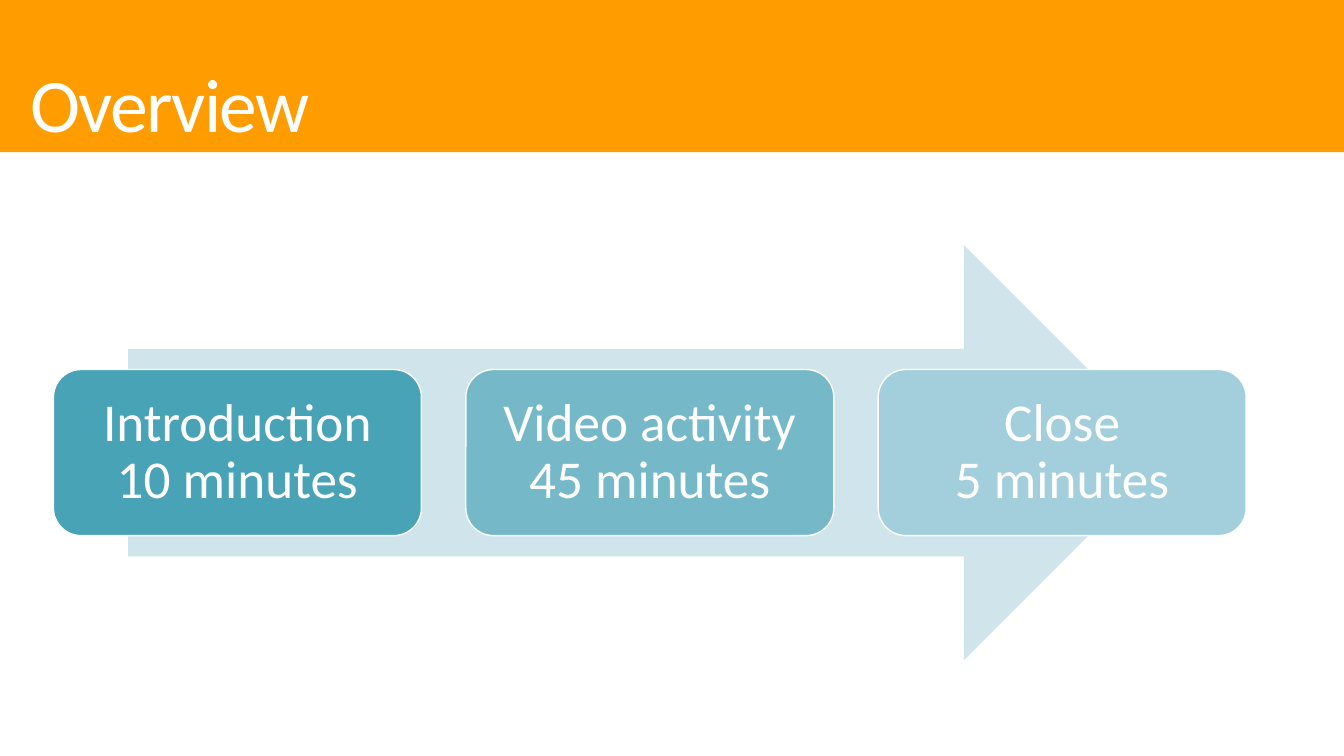
from dataclasses import dataclass

from pptx import Presentation
from pptx.dml.color import RGBColor
from pptx.enum.shapes import MSO_SHAPE as SHAPE
from pptx.enum.text import MSO_ANCHOR as ANCHOR, PP_ALIGN as ALIGN
from pptx.util import Inches, Pt


@dataclass(frozen=True)
class Theme:
    """Colours, font and type sizes of the slide."""
    font: str = "Calibri"
    title_size: int = 54
    step_size: int = 38
    white: str = "FFFFFF"
    band: str = "FE9C00"
    arrow: str = "D0E5EB"
    steps: tuple = ("49A3B6", "75B9C8", "A2CFDB")


THEME = Theme()
STEPS = (
    ("Introduction", "10 minutes"),
    ("Video activity", "45 minutes"),
    ("Close", "5 minutes"),
)


def add_block(s, kind, box, fill, line=None):
    """Add a flat preset shape with an optional outline."""
    sp = s.shapes.add_shape(kind, *map(Inches, box))
    sp.shadow.inherit = False
    sp.fill.solid()
    sp.fill.fore_color.rgb = RGBColor.from_string(fill)
    if line:
        sp.line.color.rgb = RGBColor.from_string(line)
        sp.line.width = Pt(1)
    else:
        sp.line.fill.background()
    return sp


def write(tf, lines, size, align, leading):
    """Write one paragraph of broken lines and return its runs."""
    tf.word_wrap = True
    tf.vertical_anchor = ANCHOR.MIDDLE
    p = tf.paragraphs[0]
    p.alignment = align
    p.line_spacing = leading
    runs = []
    for i, text in enumerate(lines):
        if i:
            p.add_line_break()
        r = p.add_run()
        r.text = text
        r.font.name = THEME.font
        r.font.size = Pt(size)
        r.font.color.rgb = RGBColor.from_string(THEME.white)
        runs.append(r)
    return runs


def add_header(s, box, title):
    """Draw the coloured band and the title on it."""
    x, y, w, h = box
    add_block(s, SHAPE.RECTANGLE, box, THEME.band)
    tb = s.shapes.add_textbox(*map(Inches, (x + 0.2, y + 0.3, w - 1.55, h + 0.18)))
    r, = write(tb.text_frame, [title], THEME.title_size, ALIGN.LEFT, 0.85)
    r._r.get_or_add_rPr().set("spc", "-120")


def add_process(s, box, steps):
    """Draw a wide arrow with evenly spaced step cards across it."""
    x, y, w, h = box
    arrow_w, card_w, card_h = 10.35, 3.65, 0.4 * h
    add_block(s, SHAPE.RIGHT_ARROW, (x + (w - arrow_w) / 2, y, arrow_w, h), THEME.arrow)
    pitch = (w - card_w) / (len(steps) - 1)
    for i, (lines, fill) in enumerate(zip(steps, THEME.steps)):
        card = (x + i * pitch, y + (h - card_h) / 2, card_w, card_h)
        tf = add_block(s, SHAPE.ROUNDED_RECTANGLE, card, fill, THEME.white).text_frame
        tf.margin_left = tf.margin_right = Inches(0.16)
        tf.margin_top = tf.margin_bottom = Inches(0.16)
        write(tf, lines, THEME.step_size, ALIGN.CENTER, 0.9)


def main():
    """Build the overview slide and save it."""
    prs = Presentation()
    prs.slide_width, prs.slide_height = Inches(13.33), Inches(7.5)
    s = prs.slides.add_slide(prs.slide_layouts[6])
    add_process(s, (0.53, 2.43, 11.83, 4.12), STEPS)
    add_header(s, (0, -0.12, 13.33, 1.63), "Overview")
    prs.save("out.pptx")


if __name__ == "__main__":
    main()
